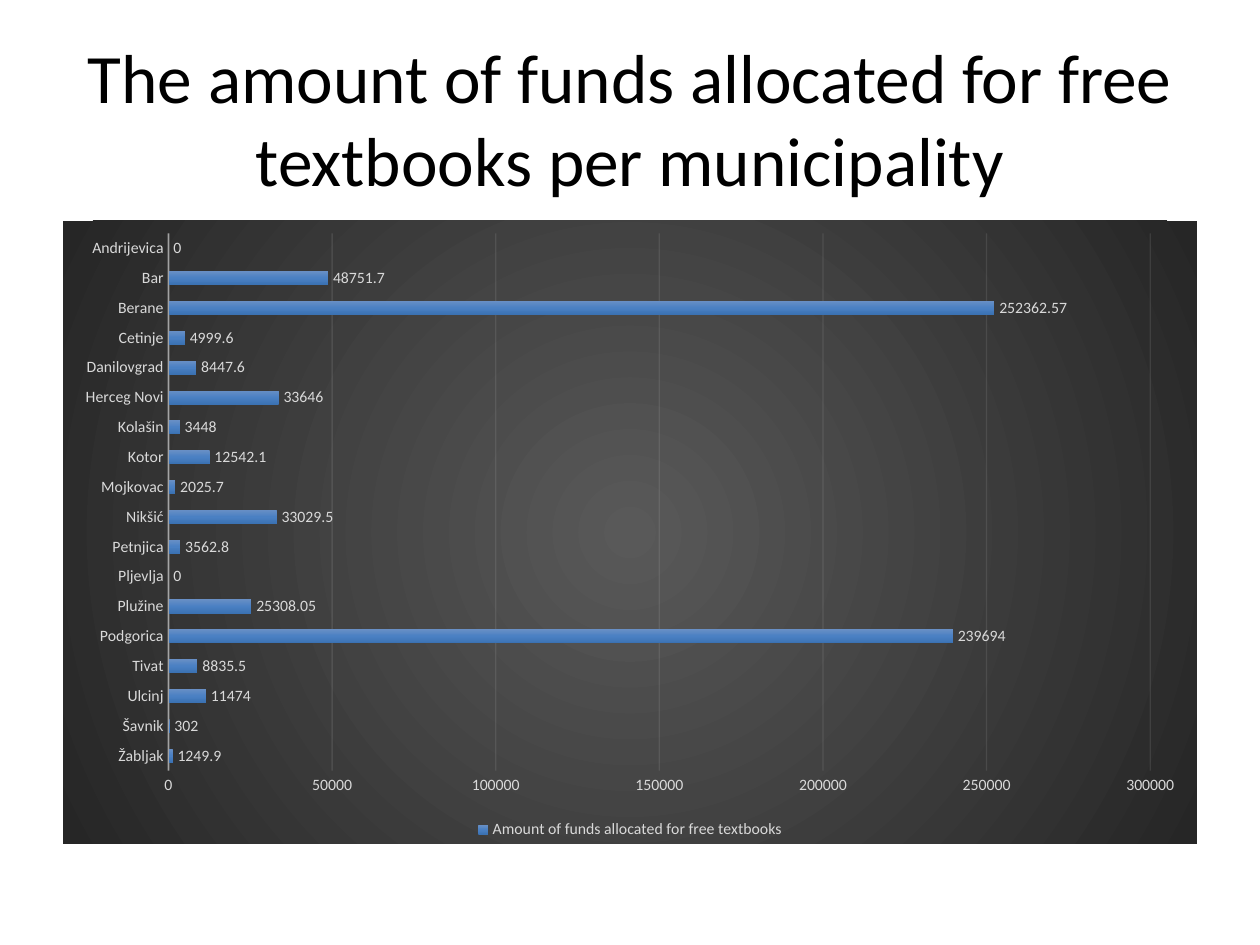
"""Build a slide with a bar chart of textbook funds per municipality."""
from lxml import etree
from pptx import Presentation
from pptx import util as u
from pptx.chart.data import CategoryChartData
from pptx.dml.color import RGBColor
from pptx.enum import chart as kinds, text
from pptx.oxml import parse_xml
from pptx.oxml.ns import nsdecls, qn

TITLE = "The amount of funds allocated for free textbooks per municipality"
SERIES = "Amount of funds allocated for free textbooks"
FUNDS = [
    ("Žabljak", 1249.9), ("Šavnik", 302), ("Ulcinj", 11474),
    ("Tivat", 8835.5), ("Podgorica", 239694), ("Plužine", 25308.05),
    ("Pljevlja", 0), ("Petnjica", 3562.8), ("Nikšić", 33029.5),
    ("Mojkovac", 2025.7), ("Kotor", 12542.1), ("Kolašin", 3448),
    ("Herceg Novi", 33646), ("Danilovgrad", 8447.6), ("Cetinje", 4999.6),
    ("Berane", 252362.57), ("Bar", 48751.7), ("Andrijevica", 0),
]
COLORS = {"title": "000000", "label": "D9D9D9", "line": "F2F2F2"}
PANEL_STOPS = [(0, "595959"), (100, "262626")]
BAR_STOPS = [(0, "688FC5"), (50, "4A80C3"), (100, "3B72B3")]
RADIAL = ('<a:path path="circle"><a:fillToRect l="50000" t="50000" '
          'r="50000" b="50000"/></a:path>')
DOWNWARD = '<a:lin ang="5400000" scaled="0"/>'
FONT = "Calibri"
PX = 914400 / 126


def px(*lengths):
    return [u.Emu(round(length * PX)) for length in lengths]


def style_font(font, size, color):
    font.name = FONT
    font.size = u.Pt(size)
    font.bold = False
    font.color.rgb = RGBColor.from_string(COLORS[color])


def style_line(line, width, opacity):
    line.width = u.Pt(width)
    line.color.rgb = RGBColor.from_string(COLORS["line"])
    color = line.fill._xPr.find(".//" + qn("a:srgbClr"))
    etree.SubElement(color, qn("a:alpha"), val=str(opacity * 1000))


def gradient_properties(stops, direction):
    marks = "".join(
        f'<a:gs pos="{place * 1000}"><a:srgbClr val="{color}"/></a:gs>'
        for place, color in stops)
    return parse_xml(
        f'<c:spPr {nsdecls("c", "a")}><a:gradFill rotWithShape="1">'
        f'<a:gsLst>{marks}</a:gsLst>{direction}</a:gradFill>'
        '<a:ln><a:noFill/></a:ln></c:spPr>')


def add_title(slide):
    title = slide.shapes.title
    title.left, title.top, title.width, title.height = px(63, 38, 1134, 158)
    frame = title.text_frame
    frame.text = TITLE
    frame.word_wrap = True
    frame.auto_size = text.MSO_AUTO_SIZE.NONE
    frame.vertical_anchor = text.MSO_ANCHOR.MIDDLE
    para = frame.paragraphs[0]
    para.alignment = text.PP_ALIGN.CENTER
    style_font(para.runs[0].font, 39.6, "title")


def add_funds_chart(slide):
    data = CategoryChartData()
    data.categories = [name for name, _ in FUNDS]
    data.add_series(SERIES, [amount for _, amount in FUNDS])
    chart = slide.shapes.add_chart(
        kinds.XL_CHART_TYPE.BAR_CLUSTERED, *px(63, 221, 1134, 623), data).chart
    chart.has_title = False
    style_font(chart.font, 10, "title")
    chart._chartSpace.find(qn("c:chart")).addnext(
        gradient_properties(PANEL_STOPS, RADIAL))

    chart.has_legend = True
    chart.legend.position = kinds.XL_LEGEND_POSITION.BOTTOM
    chart.legend.include_in_layout = False
    style_font(chart.legend.font, 9, "label")

    for axis in (chart.category_axis, chart.value_axis):
        axis.major_tick_mark = axis.minor_tick_mark = kinds.XL_TICK_MARK.NONE
        style_font(axis.tick_labels.font, 9, "label")
    style_line(chart.category_axis.format.line, 1, 54)
    chart.value_axis.format.line.fill.background()
    chart.value_axis.has_major_gridlines = True
    style_line(chart.value_axis.major_gridlines.format.line, 0.75, 10)

    plot = chart.plots[0]
    plot.gap_width = 115
    plot.overlap = -20
    plot.vary_by_categories = False
    series = plot.series[0]
    series.format.fill.solid()
    bar_format = series._element.find(qn("c:spPr"))
    series._element.replace(bar_format,
                            gradient_properties(BAR_STOPS, DOWNWARD))
    labels = series.data_labels
    labels.show_value = True
    labels.position = kinds.XL_LABEL_POSITION.OUTSIDE_END
    style_font(labels.font, 9, "label")


def main():
    deck = Presentation()
    deck.slide_width, deck.slide_height = px(1260, 945)
    slide = deck.slides.add_slide(deck.slide_layouts[5])
    add_title(slide)
    add_funds_chart(slide)
    deck.save("out.pptx")


if __name__ == "__main__":
    main()
